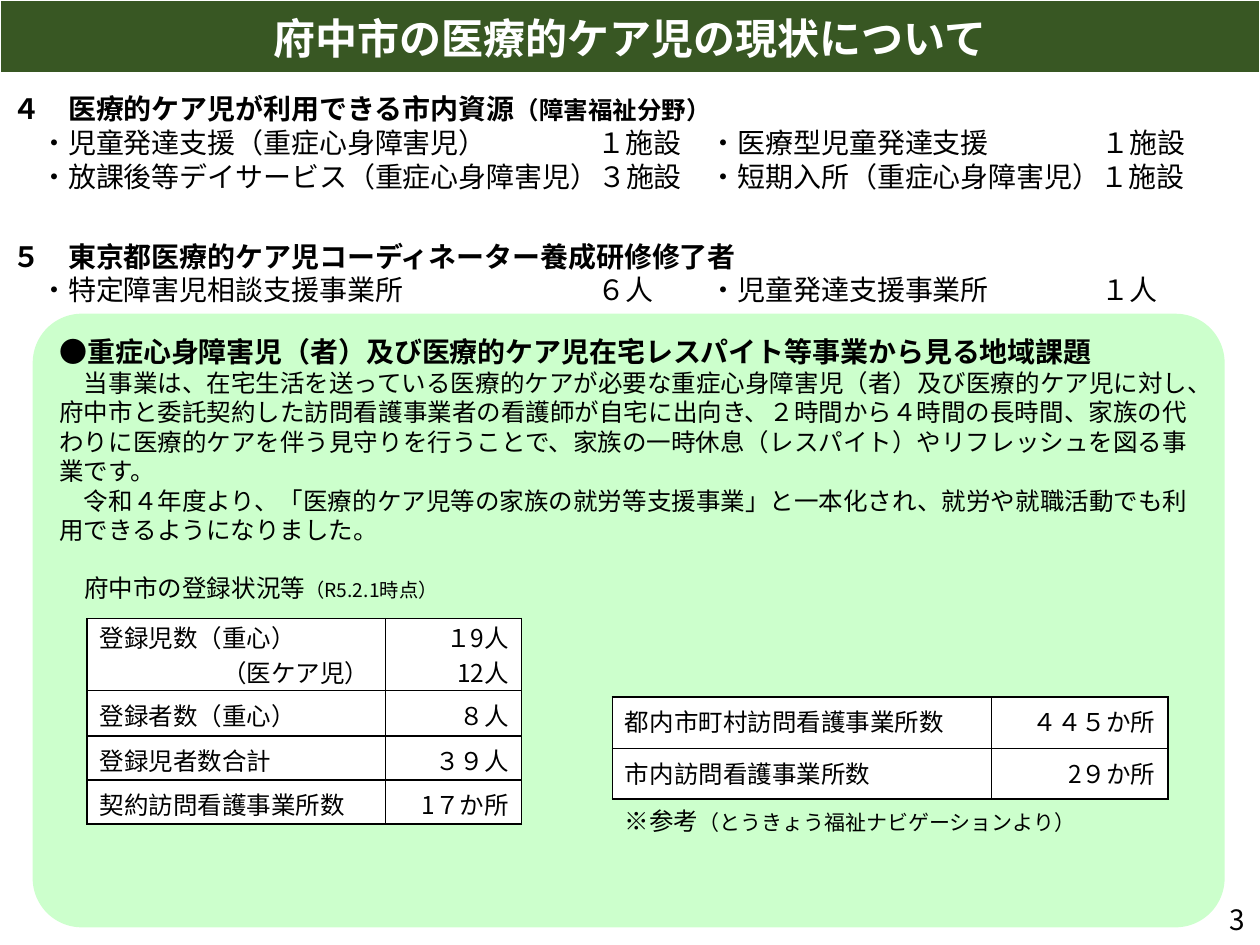
from lxml import etree
from pptx import Presentation
from pptx.dml.color import RGBColor
from pptx.enum.shapes import MSO_SHAPE
from pptx.enum.text import MSO_ANCHOR, PP_ALIGN
from pptx.oxml.ns import qn
from pptx.util import Inches, Pt

ROUNDED = MSO_SHAPE.ROUNDED_RECTANGLE
TOP, MIDDLE = MSO_ANCHOR.TOP, MSO_ANCHOR.MIDDLE
LEFT, CENTER, RIGHT = PP_ALIGN.LEFT, PP_ALIGN.CENTER, PP_ALIGN.RIGHT
BLANK = 6
FONT = "Noto Sans CJK JP"
COLORS = {"text": "000000", "banner": "385723", "panel": "CCFFCC", "white": "FFFFFF"}
RESOURCE_TABS = [Pt(16 * column - 1.5) for column in (21, 25, 39)]


def rgb(key):
    """Return the named palette colour."""
    return RGBColor.from_string(COLORS[key])


class SlideBuilder:
    """Holds the slide and its text style, and adds each kind of element."""

    def __init__(self, slide):
        self.slide = slide

    def runs(self, paragraph, runs, color="text", align=LEFT):
        """Add (text, size, bold) runs to a paragraph."""
        paragraph.alignment = align
        for text, size, bold in runs:
            run = paragraph.add_run()
            run.text = text
            font = run.font
            font.size, font.bold, font.name = Pt(size), bold, FONT
            font.color.rgb = rgb(color)
            etree.SubElement(font._element, qn("a:ea"), typeface=FONT)

    def fill_text(self, frame, paragraphs, color="text", align=LEFT):
        """Write a list of paragraphs into a text frame."""
        for index, runs in enumerate(paragraphs):
            paragraph = frame.add_paragraph() if index else frame.paragraphs[0]
            self.runs(paragraph, runs, color, align)

    def text(self, box, paragraphs, align=LEFT, anchor=TOP, tabs=()):
        """Add a text box, with optional tab stops."""
        frame = self.slide.shapes.add_textbox(*map(Inches, box)).text_frame
        frame.word_wrap = True
        frame.vertical_anchor = anchor
        self.fill_text(frame, paragraphs, align=align)
        if tabs:
            for paragraph in frame.paragraphs:
                properties = paragraph._p.get_or_add_pPr()
                stops = etree.SubElement(properties, qn("a:tabLst"))
                for position in tabs:
                    etree.SubElement(stops, qn("a:tab"), pos=str(position), algn="l")

    def panel(self, box, paragraphs):
        """Add the rounded panel with its text."""
        panel = self.slide.shapes.add_shape(ROUNDED, *map(Inches, box))
        panel.adjustments[0] = 0.08
        panel.shadow.inherit = False
        panel.fill.solid()
        panel.fill.fore_color.rgb = rgb("panel")
        panel.line.fill.background()
        panel.text_frame.vertical_anchor = TOP
        self.fill_text(panel.text_frame, paragraphs)

    def grid(self, left, top, widths, heights):
        """Add a plain table with the given column widths and row heights."""
        box = (left, top, sum(widths), sum(heights))
        table = self.slide.shapes.add_table(
            len(heights), len(widths), *map(Inches, box)).table
        table.first_row = table.horz_banding = False
        for column, width in zip(table.columns, widths):
            column.width = Inches(width)
        for row, height in zip(table.rows, heights):
            row.height = Inches(height)
        return table

    def cell(self, cell, paragraphs, fill, color, align):
        """Fill one table cell and write its text."""
        cell.fill.solid()
        cell.fill.fore_color.rgb = rgb(fill)
        self.fill_text(cell.text_frame, paragraphs, color, align)

    def borders(self, cell):
        """Draw a one-point line on every side of a cell."""
        properties = cell._tc.get_or_add_tcPr()
        for index, side in enumerate(("lnL", "lnR", "lnT", "lnB")):
            line = etree.Element(qn(f"a:{side}"), w=str(Pt(1)))
            fill = etree.SubElement(line, qn("a:solidFill"))
            etree.SubElement(fill, qn("a:srgbClr"), val=COLORS["text"])
            properties.insert(index, line)

    def banner(self, text, width, height):
        """Add the heading as a one-cell table across the top."""
        heading = self.grid(0, 0, (width,), (height,)).cell(0, 0)
        heading.margin_top = heading.margin_bottom = 0
        heading.vertical_anchor = MIDDLE
        self.cell(heading, [[(text, 24, True)]], "banner", "white", CENTER)

    def counts(self, left, top, widths, heights, rows):
        """Add a bordered table of labels and right-aligned counts."""
        table = self.grid(left, top, widths, heights)
        for row, values in zip(table.rows, rows):
            for cell, value, align in zip(row.cells, values, (LEFT, RIGHT)):
                lines = [[(line, 14, False)] for line in value.split("\n")]
                cell.margin_top = Inches(0.05 if len(lines) == 1 else 0)
                cell.margin_bottom = 0
                self.cell(cell, lines, "white", "text", align)
                self.borders(cell)
        return table


def main():
    """Build and save the slide."""
    deck = Presentation()
    deck.slide_width, deck.slide_height = Inches(10), Inches(7.5)
    builder = SlideBuilder(deck.slides.add_slide(deck.slide_layouts[BLANK]))

    builder.text((7.73, 7.1, 2.25, 0.4), [[("3", 16, False)]], RIGHT, MIDDLE)
    builder.banner("府中市の医療的ケア児の現状について", 10, 0.58)
    builder.text((0, 0.68, 9.72, 1.18), [
        [("４　医療的ケア児が利用できる市内資源", 16, True), ("（障害福祉分野）", 14, True)],
        [("　・児童発達支援（重症心身障害児）\t１施設\t・医療型児童発達支援\t１施設", 16, False)],
        [("　・放課後等デイサービス（重症心身障害児）３施設\t"
          "・短期入所（重症心身障害児）１施設", 16, False)],
    ], tabs=RESOURCE_TABS)
    builder.text((0, 1.85, 9.58, 0.64), [
        [("５　東京都医療的ケア児コーディネーター養成研修修了者", 16, True)],
        [("　・特定障害児相談支援事業所\t６人\t・児童発達支援事業所\t１人", 16, False)],
    ], tabs=RESOURCE_TABS)

    builder.panel((0.26, 2.49, 9.46, 4.87), [
        [("●重症心身障害児（者）及び医療的ケア児在宅レスパイト等事業から見る地域課題", 16, True)],
        [("　当事業は、在宅生活を送っている医療的ケアが必要な重症心身障害児（者）及び"
          "医療的ケア児に対し、府中市と委託契約した訪問看護事業者の看護師が自宅に出向き、"
          "２時間から４時間の長時間、家族の代わりに医療的ケアを伴う見守りを行うことで、"
          "家族の一時休息（レスパイト）やリフレッシュを図る事業です。", 14, False)],
        [("　令和４年度より、「医療的ケア児等の家族の就労等支援事業」と一本化され、"
          "就労や就職活動でも利用できるようになりました。", 14, False)],
    ])

    registrations = builder.counts(0.69, 4.91, (2.37, 1.08), (0.57, 0.36, 0.35, 0.35), [
        ("登録児数（重心）\n（医ケア児）", "１9人\n12人"),
        ("登録者数（重心）", "８人"),
        ("登録児者数合計", "３９人"),
        ("契約訪問看護事業所数", "1７か所"),
    ])
    medical_care_line = registrations.cell(0, 0).text_frame.paragraphs[1]
    medical_care_line._p.get_or_add_pPr().set("marL", str(Pt(14 * 5)))
    builder.counts(4.86, 5.53, (3.01, 1.4), (0.41, 0.4), [
        ("都内市町村訪問看護事業所数", "４４５か所"),
        ("市内訪問看護事業所数", "2９か所"),
    ])

    builder.text((0.57, 4.5, 5.35, 0.34), [
        [("府中市の登録状況等", 14, False), ("（R5.2.1時点）", 11, False)]])
    builder.text((4.86, 6.35, 4.26, 0.34), [
        [("※参考", 14, False), ("（とうきょう福祉ナビゲーションより）", 12, False)]])
    deck.save("out.pptx")


if __name__ == "__main__":
    main()
